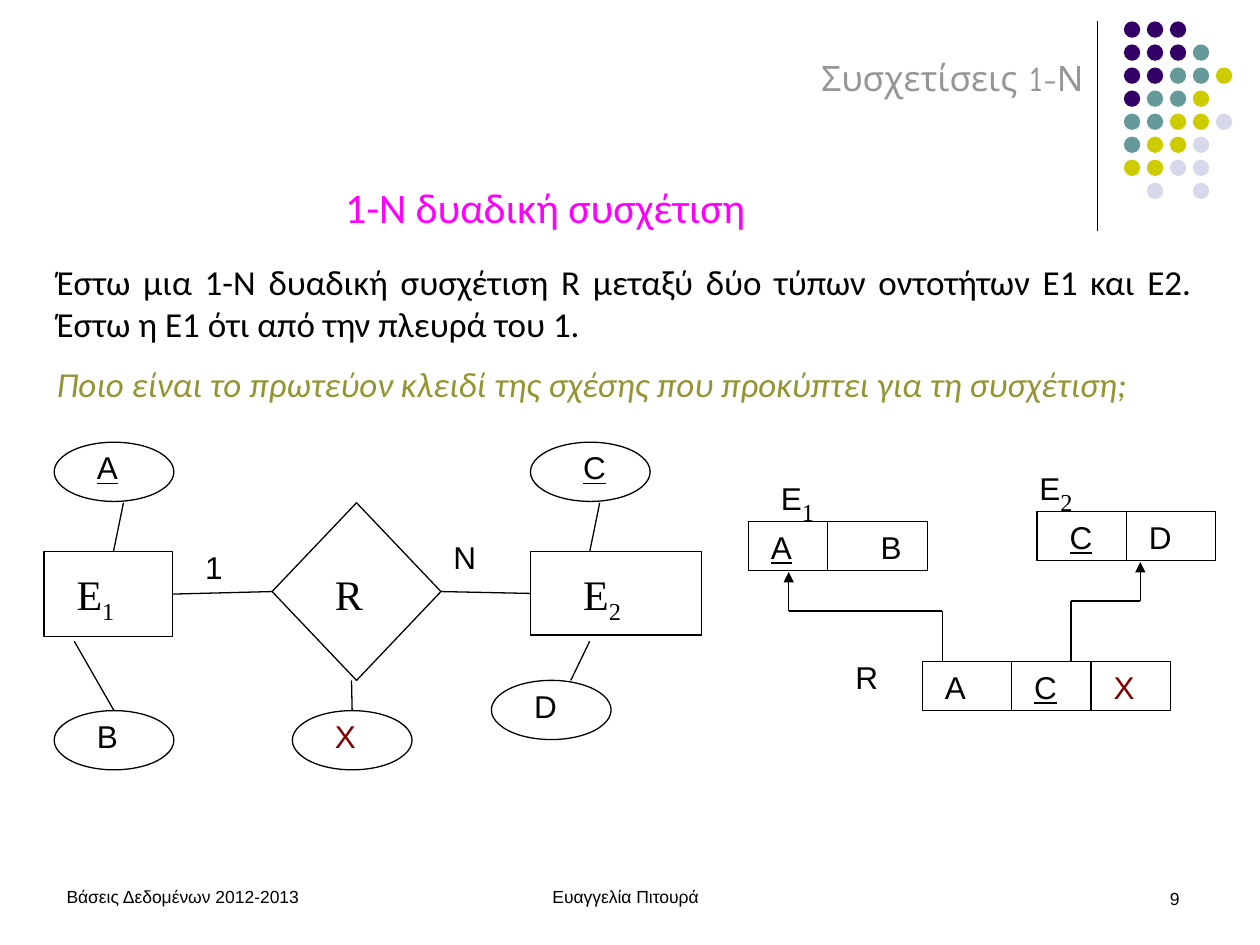
from itertools import pairwise

from lxml import etree
from pptx import Presentation
from pptx import util as u
from pptx.dml.color import RGBColor
from pptx.enum import shapes, text
from pptx.oxml.ns import qn

BLACK = "000000"
MAROON = "800000"
SHAPE = shapes.MSO_SHAPE
ALIGN = text.PP_ALIGN


def color(value):
    return RGBColor.from_string(value)


class Painter:
    sans = "Arial"
    serif = "Times New Roman"
    body = "Calibri"
    title = "Comic Neue"
    stroke = 0.75

    def __init__(self, page):
        self.page = page

    def shape(self, kind, left, top, width, height, fill=None):
        box = self.page.shapes.add_shape(
            kind, u.Inches(left), u.Inches(top), u.Inches(width), u.Inches(height))
        box.shadow.inherit = False
        if fill:
            box.fill.solid()
            box.fill.fore_color.rgb = color(fill)
            box.line.fill.background()
        else:
            box.fill.background()
            box.line.color.rgb = color(BLACK)
            box.line.width = u.Pt(self.stroke)
        return box

    def line(self, start, end, arrow=False, source=None, target=None):
        link = self.page.shapes.add_connector(
            shapes.MSO_CONNECTOR.STRAIGHT,
            *(u.Inches(value) for value in (*start, *end)))
        link.line.color.rgb = color(BLACK)
        link.line.width = u.Pt(self.stroke)
        properties = link._element.spPr
        etree.SubElement(properties, qn("a:effectLst"))
        if arrow:
            etree.SubElement(link.line._get_or_add_ln(), qn("a:tailEnd"), type="triangle")
        if source:
            link.begin_connect(*source)
        if target:
            link.end_connect(*target)
        return link

    def arrow_route(self, points):
        for start, end in pairwise(points):
            self.line(start, end, arrow=end == points[-1])

    def textbox(self, left, top, width, height, align=None, grow=True):
        box = self.page.shapes.add_textbox(
            u.Inches(left), u.Inches(top), u.Inches(width), u.Inches(height))
        frame = box.text_frame
        frame.word_wrap = True
        if grow:
            frame.auto_size = text.MSO_AUTO_SIZE.SHAPE_TO_FIT_TEXT
        self.style_paragraph(frame.paragraphs[0], align, grow)
        return frame

    def style_paragraph(self, para, align=None, spaced=True):
        if align is not None:
            para.alignment = align
        if spaced:
            before = etree.SubElement(para._p.get_or_add_pPr(), qn("a:spcBef"))
            etree.SubElement(before, qn("a:spcPct"), val="50000")

    def span(self, para, words, size, font, ink=BLACK, underline=None,
             italic=None, subscript=False):
        span = para.add_run()
        span.text = words
        span.font.size = u.Pt(size)
        span.font.name = font
        span.font.color.rgb = color(ink)
        span.font.underline = underline
        span.font.italic = italic
        if subscript:
            span._r.get_or_add_rPr().set("baseline", "-25000")

    def label(self, words, left, top, width=0.71, ink=BLACK, key=None):
        para = self.textbox(left, top, width, 0.4).paragraphs[0]
        self.span(para, words, 18, self.sans, ink, underline=key)

    def indexed_label(self, letter, index, left, top, size, font):
        para = self.textbox(left, top, 1.1, 0.4).paragraphs[0]
        self.span(para, letter, size, font)
        if index:
            self.span(para, index, 24, self.serif, subscript=True)

    def attribute(self, name, left, top, indent=0.24, ink=BLACK, key=None):
        oval = self.shape(SHAPE.OVAL, left, top, 0.95, 0.47)
        self.label(name, left + indent, top, ink=ink, key=key)
        return oval

    def relation(self, left, top, width, dividers, columns):
        self.shape(SHAPE.RECTANGLE, left, top, width, 0.39)
        for x in dividers:
            self.line((x, top), (x, top + 0.39))
        for name, x, ink, key in columns:
            self.label(name, x, top, ink=ink, key=key)

    def plain_text(self, words, left, top, width, height, align=None):
        para = self.textbox(left, top, width, height, align, grow=False).paragraphs[0]
        self.span(para, words, 10, self.sans)


def draw_dots(painter):
    inks = {"P": "330066", "T": "669999", "Y": "CCCC00", "L": "D8D8EC"}
    rows = ("PPP", "PPPT", "PPTTY", "PTTY", "TTYYL", "TYYL", "YYLL", " L L")
    for row, pattern in enumerate(rows):
        for column, mark in enumerate(pattern):
            if mark in inks:
                painter.shape(SHAPE.OVAL, 8.92 + column * 0.73 / 4,
                              0.17 + row * 1.28 / 7, 0.13, 0.13, inks[mark])


def draw_texts(painter):
    heading = painter.textbox(0.51, 0.28, 8.19, 0.55, ALIGN.RIGHT, grow=False)
    heading.vertical_anchor = text.MSO_ANCHOR.BOTTOM
    painter.span(heading.paragraphs[0], "Συσχετίσεις 1-Ν", 20, painter.title, "969696")

    subtitle = painter.textbox(2.64, 1.39, 5.26, 0.5)
    painter.span(subtitle.paragraphs[0], "1-Ν δυαδική συσχέτιση", 24, painter.body, "FF00FF")

    problem = painter.textbox(0.35, 2.02, 9.21, 1.28, ALIGN.JUSTIFY)
    painter.span(problem.paragraphs[0],
                 "Έστω μια 1-Ν δυαδική συσχέτιση R μεταξύ δύο τύπων οντοτήτων E1 και E2. "
                 "Έστω η E1 ότι από την πλευρά του 1.", 20, painter.body)
    question = problem.add_paragraph()
    painter.style_paragraph(question, ALIGN.JUSTIFY)
    painter.span(question,
                 "Ποιο είναι το πρωτεύον κλειδί της σχέσης που προκύπτει για τη συσχέτιση;",
                 20, painter.body, "949432", italic=True)

    painter.plain_text("Βάσεις Δεδομένων 2012-2013", 0.43, 6.98, 2.6, 0.32)
    painter.plain_text("Ευαγγελία Πιτουρά", 3.35, 6.98, 3.23, 0.22, ALIGN.CENTER)
    painter.plain_text("9", 7.13, 7, 2.33, 0.5, ALIGN.RIGHT)


def draw_entities(painter):
    first = painter.shape(SHAPE.FLOWCHART_PROCESS, 0.35, 4.38, 1.02, 0.67)
    second = painter.shape(SHAPE.FLOWCHART_PROCESS, 4.21, 4.38, 1.36, 0.66)
    diamond = painter.shape(SHAPE.FLOWCHART_DECISION, 2.16, 3.99, 1.34, 1.41)
    for letter, index, left in (("E", "1", 0.51), ("R", None, 2.56), ("E", "2", 4.53)):
        painter.indexed_label(letter, index, left, 4.46, 24, painter.serif)
    painter.line((1.37, 4.7), (2.16, 4.7), source=(first, 3), target=(diamond, 1))
    painter.line((3.5, 4.7), (4.21, 4.7), source=(diamond, 3), target=(second, 1))
    painter.label("1", 1.53, 4.3)
    painter.label("N", 3.5, 4.22)

    painter.attribute("A", 0.43, 3.51, key=True)
    painter.attribute("C", 4.21, 3.51, indent=0.32, key=True)
    painter.attribute("D", 3.9, 5.4)
    oval_b = painter.attribute("B", 0.43, 5.64)
    oval_x = painter.attribute("X", 2.32, 5.64, ink=MAROON)
    painter.line((0.98, 3.99), (0.9, 4.38))
    painter.line((4.76, 3.99), (4.68, 4.38))
    painter.line((4.68, 5.09), (4.53, 5.4))
    painter.line((0.59, 5.09), (0.9, 5.64), target=(oval_b, 0))
    painter.line((2.79, 5.4), (2.79, 5.64), target=(oval_x, 0))


def draw_relations(painter):
    painter.relation(5.94, 4.14, 1.42, [6.57],
                     [("A", 6.02, BLACK, True), ("B", 6.89, BLACK, None)])
    painter.relation(8.23, 4.06, 1.42, [8.94],
                     [("C", 8.39, BLACK, True), ("D", 9.02, BLACK, None)])
    painter.relation(7.32, 5.25, 1.97, [8.03, 8.66],
                     [("A", 7.4, BLACK, None), ("C", 8.11, BLACK, True),
                      ("X", 8.74, MAROON, None)])
    for letter, index, left, top in (("E", "1", 6.1, 3.67), ("E", "2", 8.15, 3.59),
                                     ("R", None, 6.69, 5.17)):
        painter.indexed_label(letter, index, left, top, 18, painter.sans)
    painter.arrow_route([(7.48, 5.25), (7.48, 4.85), (6.26, 4.85), (6.26, 4.54)])
    painter.arrow_route([(8.5, 5.25), (8.5, 4.77), (9.05, 4.77), (9.05, 4.46)])


def main():
    deck = Presentation()
    deck.slide_width = u.Inches(10)
    deck.slide_height = u.Inches(7.5)
    painter = Painter(deck.slides.add_slide(deck.slide_layouts[6]))
    painter.line((8.71, 0.17), (8.71, 1.83))
    draw_dots(painter)
    draw_texts(painter)
    draw_entities(painter)
    draw_relations(painter)
    deck.save("out.pptx")


if __name__ == "__main__":
    main()
